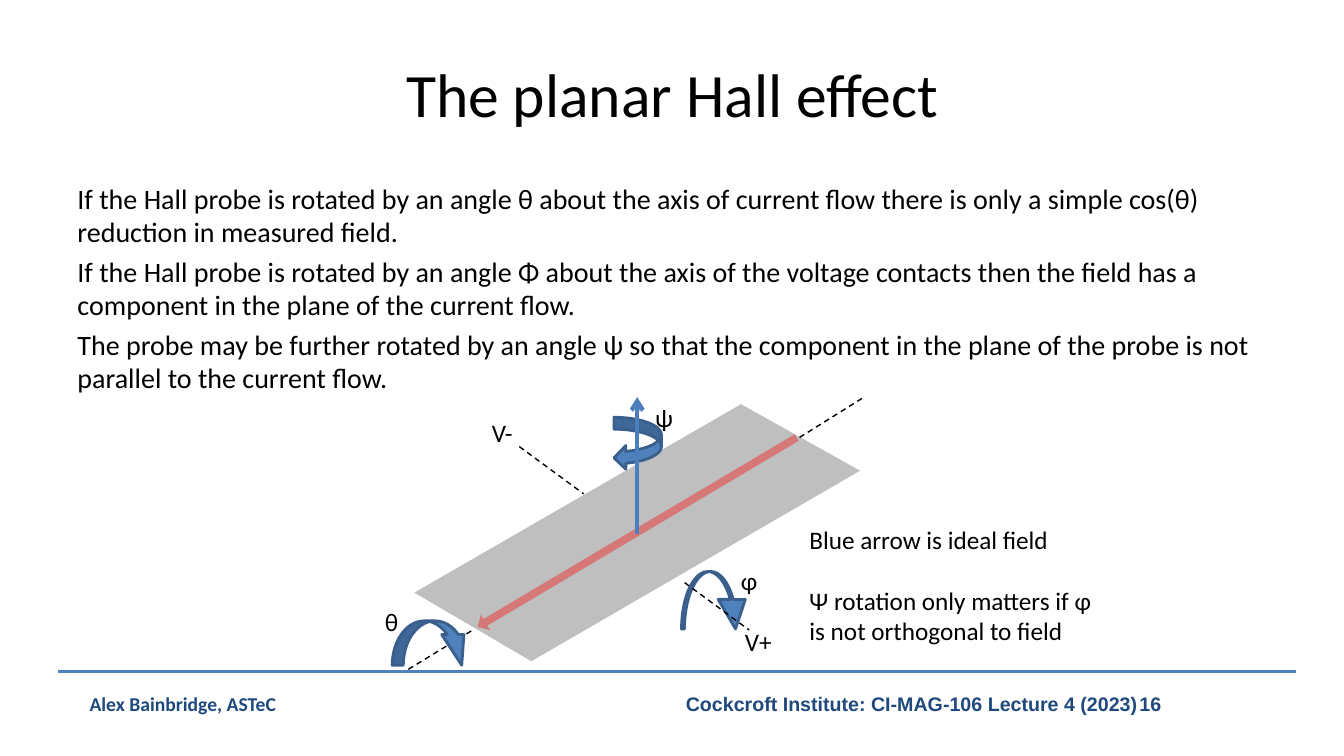
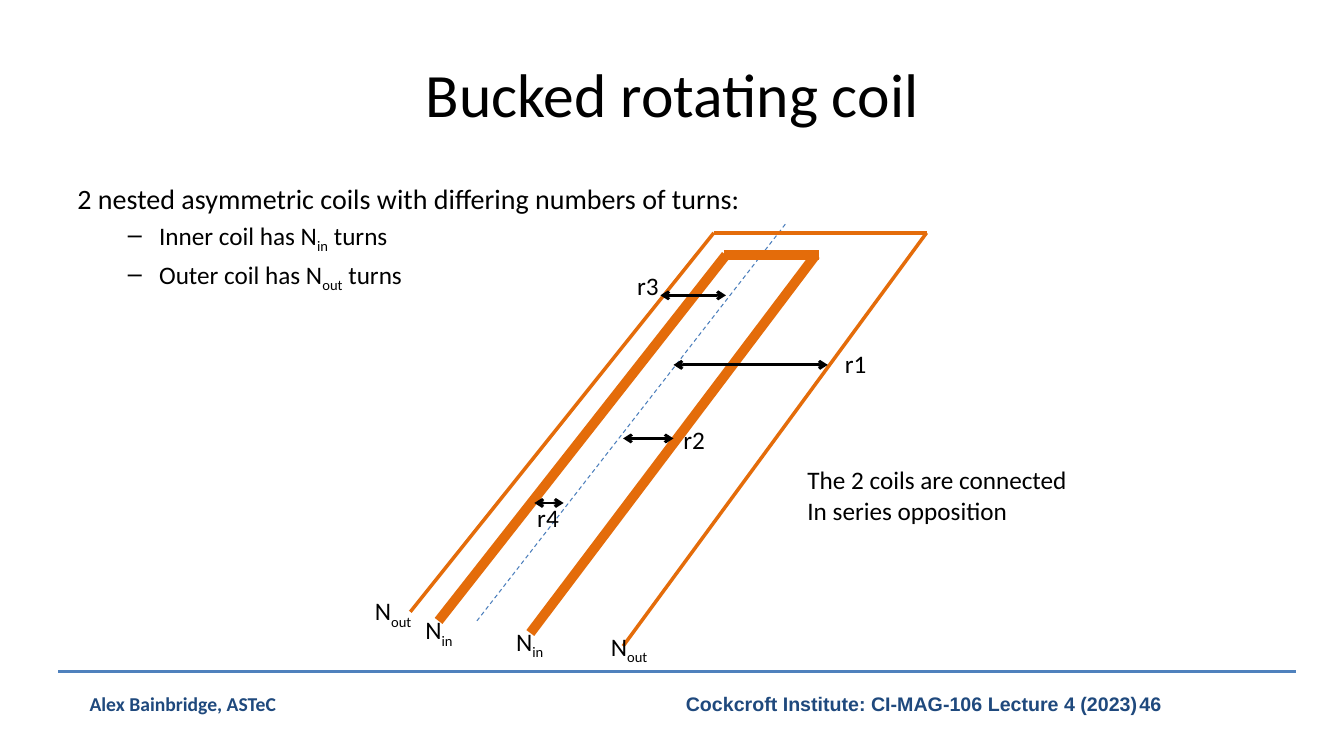
from dataclasses import dataclass
from itertools import pairwise
from typing import Any

from lxml import etree
from pptx import Presentation
from pptx import util as u
from pptx.dml import color
from pptx.enum import dml, shapes, text
from pptx.oxml import ns

BLACK, BLUE, NAVY, ORANGE = "000000", "4F81BD", "1F497D", "E46C0A"
DARK_BLUE, ARROW_BLUE = "3A5F8C", "4B7EBC"
PLATE_GREY, CURRENT_RED = "BFBFBF", "FF0000"
FONT, FOOTER_FONT = "Calibri", "Arial"
AUTHOR = "Alex Bainbridge, ASTeC"
LECTURE = "Cockcroft Institute: CI-MAG-106 Lecture 4 (2023)"


@dataclass
class Region:
    """Part of a slide whose contents are placed from its top left corner."""

    slide: Any
    left: float = 0
    top: float = 0

    def point(self, x, y):
        """Return slide coordinates for a point inside the region."""
        return u.Inches(self.left + x), u.Inches(self.top + y)

    def box(self, x, y, width, height):
        """Return slide coordinates and size for a box inside the region."""
        return *self.point(x, y), u.Inches(width), u.Inches(height)


def rgb(value):
    """Turn a hex string into a colour."""
    return color.RGBColor.from_string(value)


def add_child(parent, tag, **attributes):
    """Append a DrawingML element to a parent."""
    return etree.SubElement(parent, ns.qn(tag), attributes)


def write(paragraph, content, size=18, font=FONT, hue=BLACK, bold=False,
          align=text.PP_ALIGN.LEFT, before=0, bullet=None):
    """Fill a paragraph; every second part between bars is a subscript."""
    paragraph.alignment = align
    paragraph.space_before = u.Pt(before)
    if bullet:
        paragraph.level = 1
        properties = paragraph._p.get_or_add_pPr()
        properties.set("marL", str(u.Inches(0.81)))
        properties.set("indent", str(u.Inches(-0.31)))
        add_child(properties, "a:buChar", char=bullet)
    for index, part in enumerate(content.split("|")):
        run = paragraph.add_run()
        run.text = part
        run.font.name, run.font.size, run.font.bold = font, u.Pt(size), bold
        run.font.color.rgb = rgb(hue)
        if index % 2:
            run._r.get_or_add_rPr().set("baseline", "-25000")


def add_text(region, box, paragraphs, wrap=True,
             anchor=text.MSO_ANCHOR.TOP, **style):
    """Add a text box from (content, format) pairs with a shared style."""
    frame = region.slide.shapes.add_textbox(*region.box(*box)).text_frame
    frame.word_wrap = wrap
    frame.vertical_anchor = anchor
    for index, (content, own_style) in enumerate(paragraphs):
        paragraph = frame.add_paragraph() if index else frame.paragraphs[0]
        write(paragraph, content, **{**style, **own_style})


def add_labels(region, labels):
    """Add short labels given as (content, x, y, width)."""
    for content, x, y, width in labels:
        add_text(region, (x, y, width, 0.4), [(content, {})], wrap=False)


def add_line(region, start, end, hue=BLACK, width=1.0, dashed=False, arrows=()):
    """Add a straight line with optional dashes and arrowheads."""
    line = region.slide.shapes.add_connector(
        shapes.MSO_CONNECTOR.STRAIGHT, *region.point(*start), *region.point(*end))
    line.line.color.rgb = rgb(hue)
    line.line.width = u.Pt(width)
    if dashed:
        line.line.dash_style = dml.MSO_LINE.DASH
    for tag in arrows:
        add_child(line.line._get_or_add_ln(), tag, type="arrow")
    add_child(line._element.spPr, "a:effectLst")


def paint(shape, fill, outline=None):
    """Give a shape a plain fill and an optional outline."""
    shape.shadow.inherit = False
    shape.fill.solid()
    shape.fill.fore_color.rgb = rgb(fill)
    if outline:
        shape.line.color.rgb = rgb(outline)
        shape.line.width = u.Pt(2)
    else:
        shape.line.fill.background()


def add_arrow(region, kind, box, adjustments=(), fill=BLUE, outline=DARK_BLUE):
    """Add a block arrow and return it."""
    arrow = region.slide.shapes.add_shape(kind, *region.box(*box))
    for index, value in enumerate(adjustments):
        arrow.adjustments[index] = value
    paint(arrow, fill, outline)
    return arrow


def add_footer(region, number):
    """Add the rule, author, lecture name and slide number."""
    style = dict(size=14, hue=NAVY, bold=True)
    add_text(region, (0.21, 0.16, 5.14, 0.34), [(AUTHOR, {})], **style)
    add_line(region, (0, 0), (12.27, 0), BLUE, 2)
    add_text(region, (4.89, 0.16, 7.38, 0.34), [(f"{LECTURE}\t{number}", {})],
             font=FOOTER_FONT, align=text.PP_ALIGN.CENTER, **style)


def add_slide(presentation, title, number, body):
    """Add a slide with title, body text and footer."""
    slide = presentation.slides.add_slide(presentation.slide_layouts[6])
    content = Region(slide, 0.67, 0.3)
    add_footer(Region(slide, 0.58, 6.66), number)
    add_text(content, (0, 0, 12, 1.25), [(title, {})], size=44,
             anchor=text.MSO_ANCHOR.MIDDLE, align=text.PP_ALIGN.CENTER)
    add_text(content, (0, 1.45, 12, 4.95), body, size=20, before=4)
    return slide


def add_plate(region):
    """Add the tilted probe plate with the current arrow on it."""
    corners = [region.point(*corner) for corner in
               ((3.65, 0.11), (4.83, 0.77), (1.57, 2.66), (0.41, 1.98))]
    builder = region.slide.shapes.build_freeform(*corners[0])
    builder.add_line_segments(corners[1:], close=True)
    paint(builder.convert_to_shape(), PLATE_GREY)
    current = add_arrow(region, shapes.MSO_SHAPE.UP_ARROW, (2.53, -0.46, 0.18, 3.68),
                        (0.424, 0.5), CURRENT_RED, None)
    current.rotation = 239.3
    fill = current._element.spPr.find(ns.qn("a:solidFill"))
    add_child(fill[0], "a:alpha", val="37000")


def add_hall_diagram(region):
    """Draw the Hall probe with its three rotation axes."""
    add_plate(region)
    for start, end in (((0.35, 2.74), (0.99, 2.35)), ((4.23, 0.44), (4.87, 0.04)),
                       ((1.45, 0.53), (2.09, 1.0))):
        add_line(region, start, end, dashed=True)
    add_arrow(region, shapes.MSO_SHAPE.CURVED_DOWN_ARROW, (0.19, 2.26, 0.8, 0.44),
              (0.25, 0.5, 0.692))
    add_arrow(region, shapes.MSO_SHAPE.CURVED_DOWN_ARROW, (3.06, 1.77, 0.67, 0.57),
              (0.052, 0.472, 0.514))
    add_arrow(region, shapes.MSO_SHAPE.CURVED_LEFT_ARROW, (2.39, 0.24, 0.47, 0.52))
    add_line(region, (3.09, 1.88), (3.73, 2.35), dashed=True)
    add_labels(region, [("θ", 0.02, 2.07, 0.34), ("φ", 3.55, 1.66, 0.37),
                        ("ψ", 2.7, 0.04, 0.38), ("V+", 3.59, 2.26, 0.47),
                        ("V-", 1.08, 0.19, 0.42)])
    add_line(region, (2.62, 1.4), (2.62, 0.04), ARROW_BLUE, 3, arrows=["a:tailEnd"])
    add_text(region, (4.23, 1.25, 3.18, 1.31), [
        ("Blue arrow is ideal field", {}),
        ("Ψ rotation only matters if φ is not orthogonal to field", {"before": 22})])


def add_coil_diagram(region):
    """Draw the nested coils with their radii."""
    add_line(region, (1.13, 3.96), (4.2, 0.01), ARROW_BLUE, 0.75, dashed=True)
    inner = [((0.75, 3.96), (3.6, 0.33)), ((3.58, 0.33), (4.52, 0.33)),
             ((4.49, 0.33), (1.66, 4.08))]
    outer = pairwise([(0.47, 3.87), (3.48, 0.11), (5.59, 0.11), (2.58, 4.21)])
    for sides, width in ((inner, 7), (outer, 2.5)):
        for start, end in sides:
            add_line(region, start, end, ORANGE, width)
    for left, right, y in ((3.08, 4.61, 1.42), (2.58, 3.08, 2.15),
                           (1.7, 1.99, 2.79), (2.95, 3.6, 0.73)):
        add_line(region, (left, y), (right, y), width=2,
                 arrows=["a:headEnd", "a:tailEnd"])
    add_labels(region, [("r1", 4.68, 1.21, 0.42), ("r2", 3.08, 1.96, 0.42),
                        ("r3", 2.62, 0.43, 0.42), ("r4", 1.63, 2.73, 0.42),
                        ("N|in", 0.52, 3.85, 0.49), ("N|in", 1.42, 3.96, 0.49),
                        ("N|out", 2.36, 4.01, 0.6), ("N|out", 0.02, 3.66, 0.6)])
    add_text(region, (4.31, 2.36, 2.81, 0.71), [
        ("The 2 coils are connected", {}), ("In series opposition", {})], wrap=False)


def main():
    """Build and save the presentation."""
    presentation = Presentation()
    presentation.slide_width = u.Inches(13.33)
    presentation.slide_height = u.Inches(7.5)
    hall_slide = add_slide(presentation, "The planar Hall effect", 16, [
        ("If the Hall probe is rotated by an angle θ about the axis of current flow "
         "there is only a simple cos(θ) reduction in measured field.", {}),
        ("If the Hall probe is rotated by an angle Φ about the axis of the voltage "
         "contacts then the field has a component in the plane of the current flow.", {}),
        ("The probe may be further rotated by an angle ψ so that the component in the "
         "plane of the probe is not parallel to the current flow.", {})])
    add_hall_diagram(Region(hall_slide, 3.7, 3.9))
    bullet = dict(size=18, before=3.6, bullet="–")
    coil_slide = add_slide(presentation, "Bucked rotating coil", 46, [
        ("2 nested asymmetric coils with differing numbers of turns:", {}),
        ("Inner coil has N|in| turns", bullet),
        ("Outer coil has N|out| turns", bullet)])
    add_coil_diagram(Region(coil_slide, 3.6, 2.2))
    presentation.save("out.pptx")


if __name__ == "__main__":
    main()
